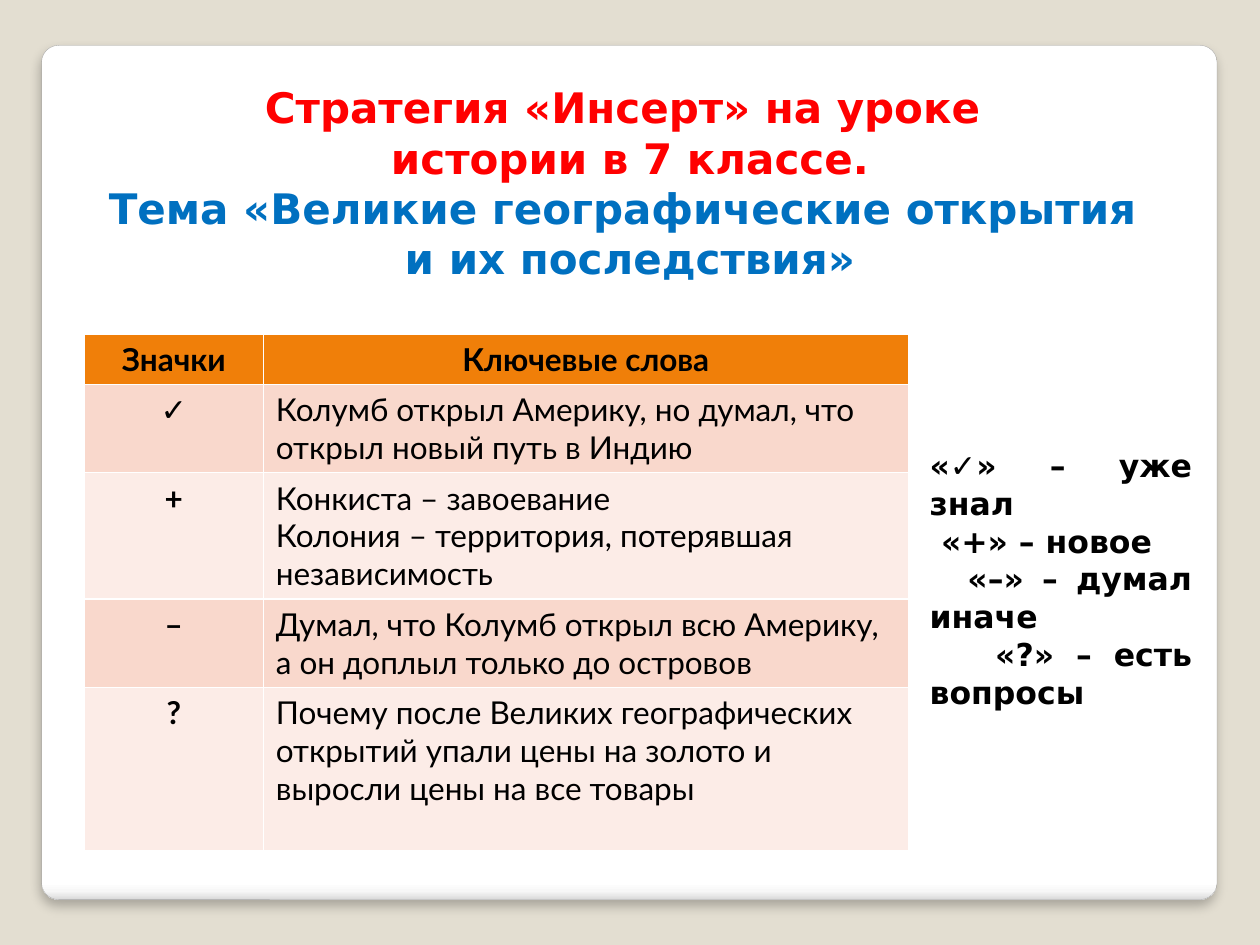
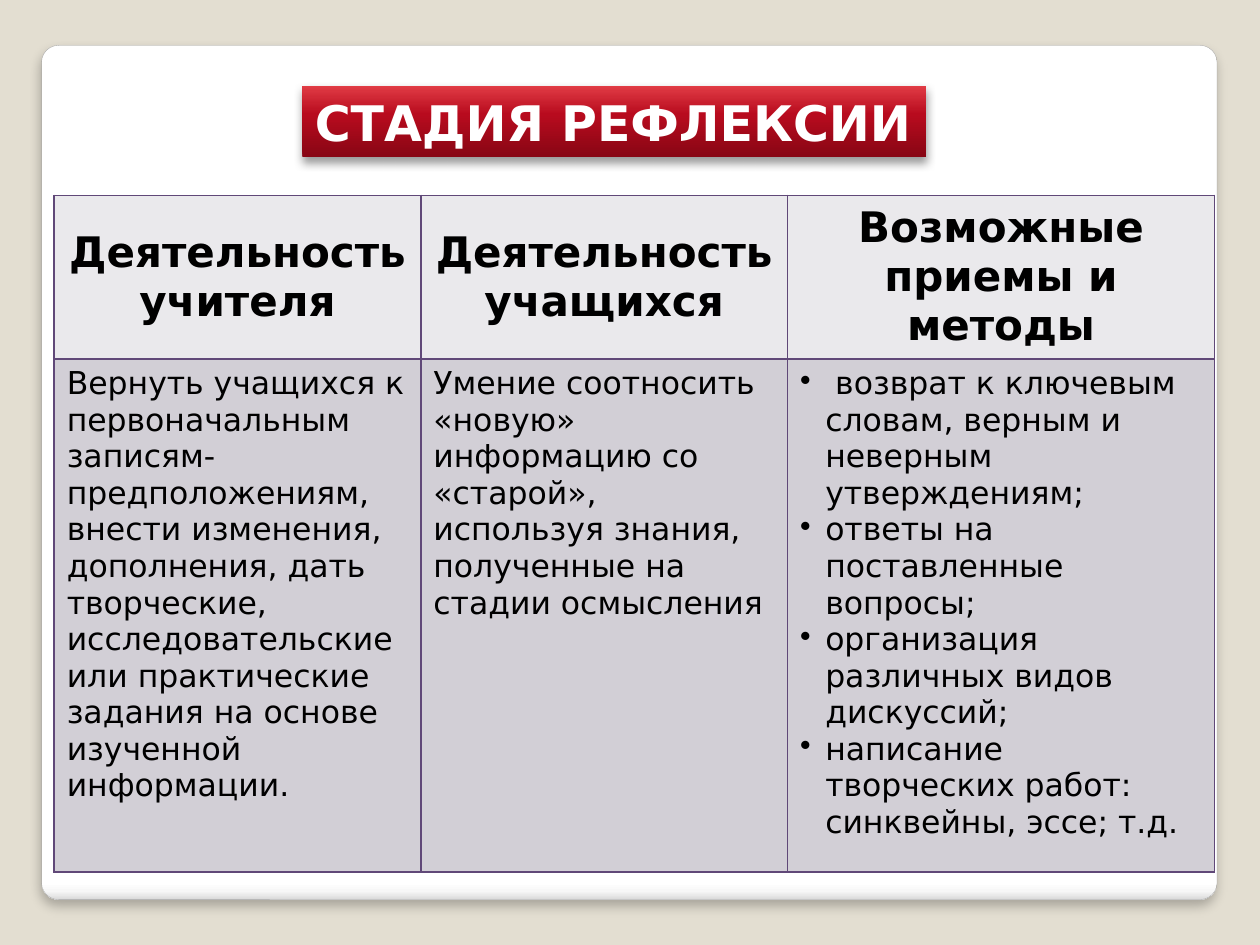
from lxml import etree
from pptx import Presentation
from pptx.dml.color import RGBColor
from pptx.enum.shapes import MSO_SHAPE
from pptx.enum.text import MSO_ANCHOR, PP_ALIGN
from pptx.oxml.ns import qn
from pptx.util import Inches, Pt

LEFT, CENTER, JUST = PP_ALIGN.LEFT, PP_ALIGN.CENTER, PP_ALIGN.JUSTIFY
TOP, MIDDLE = MSO_ANCHOR.TOP, MSO_ANCHOR.MIDDLE
RECT, ROUND = MSO_SHAPE.RECTANGLE, MSO_SHAPE.ROUNDED_RECTANGLE

# Shared look
WIDE, HIGH = Inches(10), Inches(7.5)
SAND, WHITE, BLACK = "E3DED1", "FFFFFF", "000000"
RED, BLUE, ORANGE, PURPLE = "FF0000", "0070C0", "F07F09", "604878"
PINKS = ["F9D8CC", "FCECE7"]
LILACS = ["EAE9EC", "D2CFD6"]
SANS, LATO = "DejaVu Sans", "Lato"
CARD = [(0, WHITE), (98, WHITE), (99, "F7F7F7"), (100, "DADADA")]
CRIMSON = [(0, "870614"), (60, "B80B1E"), (100, "E13C45")]


def color(code):
    return RGBColor.from_string(code)


def across(share):
    """Percent of the slide's width."""
    return int(WIDE * share / 100)


def down(share):
    """Percent of the slide's height."""
    return int(HIGH * share / 100)


def place(x, y, w, h):
    return across(x), down(y), across(w), down(h)


def node(parent, tag, **attrs):
    item = etree.SubElement(parent, qn(tag))
    for name, value in attrs.items():
        item.set(name, str(value))
    return item


def tint(parent, code):
    return node(parent, "a:srgbClr", val=code)


# Text
def style(runs, size, font, code, bold):
    for run in runs:
        run.font.size = Pt(size)
        run.font.name = font
        run.font.bold = bold
        run.font.color.rgb = color(code)


def write(frame, lines, size, font=SANS, code=BLACK, bold=False, align=LEFT):
    for i, line in enumerate(lines):
        para = frame.paragraphs[0] if i == 0 else frame.add_paragraph()
        para.text = line
        para.alignment = align
        style(para.runs, size, font, code, bold)
    return frame.paragraphs


def indent(para, margin, first):
    props = para._p.get_or_add_pPr()
    props.set("marL", str(Inches(margin)))
    props.set("indent", str(Inches(first)))
    return props


def bullet(para):
    node(indent(para, 0.2, -0.2), "a:buChar", char="•")


def textbox(slide, spot, anchor=TOP):
    frame = slide.shapes.add_textbox(*place(*spot)).text_frame
    frame.word_wrap = True
    frame.vertical_anchor = anchor
    return frame


# Shapes with a gradient and a soft shadow
def panel(slide, kind, spot, stops, angle, shade):
    shape = slide.shapes.add_shape(kind, *place(*spot))
    props = shape._element.spPr
    grad = etree.Element(qn("a:gradFill"), rotWithShape="1")
    band = node(grad, "a:gsLst")
    for pos, code in stops:
        tint(node(band, "a:gs", pos=pos * 1000), code)
    node(grad, "a:lin", ang=angle * 60000, scaled=0)
    props.insert(2, grad)
    shape.line.fill.background()
    shape.shadow.inherit = False
    alpha, blur, dist = shade
    drop = node(props.find(qn("a:effectLst")), "a:outerShdw", blurRad=Pt(blur),
                dist=Pt(dist), dir=90 * 60000, algn="t", rotWithShape=0)
    node(tint(drop, BLACK), "a:alpha", val=alpha * 1000)
    return shape


# Tables
def border(cell, code):
    props = cell._tc.get_or_add_tcPr()
    for i, side in enumerate(("a:lnL", "a:lnR", "a:lnT", "a:lnB")):
        line = etree.Element(qn(side), w=str(Pt(1)))
        tint(node(line, "a:solidFill"), code)
        props.insert(i, line)


def grid(slide, x, y, cols, rows):
    spot = place(x, y, sum(cols), sum(rows))
    table = slide.shapes.add_table(len(rows), len(cols), *spot).table
    for col, share in zip(table.columns, cols):
        col.width = across(share)
    for row, share in zip(table.rows, rows):
        row.height = down(share)
    return table


def fill(cell, lines, back, edge, anchor=TOP, **look):
    cell.fill.solid()
    cell.fill.fore_color.rgb = color(back)
    border(cell, edge)
    cell.vertical_anchor = anchor
    return write(cell.text_frame, lines, **look)


# Slides
def page(deck):
    slide = deck.slides.add_slide(deck.slide_layouts[6])
    slide.background.fill.solid()
    slide.background.fill.fore_color.rgb = color(SAND)
    card = panel(slide, ROUND, (3.3, 4.8, 93.3, 90.4), CARD, 90, (25, 6, 4))
    card.adjustments[0] = 0.02
    card.line.color.rgb = color("A4A4A4")
    card.line.width = Pt(0.16)
    return slide


def insert(deck):
    slide = page(deck)

    # Title in two colours
    head = ("Стратегия «Инсерт» на уроке \nистории в 7 классе.\n"
            "Тема «Великие географические открытия \nи их последствия»")
    frame = textbox(slide, (5.1, 8, 89.8, 22.93))
    para = write(frame, [head], 24, code=RED, bold=True, align=CENTER)[0]
    style(para.runs[2:], 24, SANS, BLUE, True)

    # Signs and key words; a row is as high as its count of lines
    words = [
        ("✓", 2, ["Колумб открыл Америку, но думал, что открыл новый путь в Индию"]),
        ("+", 3, ["Конкиста – завоевание",
                  "Колония – территория, потерявшая независимость"]),
        ("–", 2, ["Думал, что Колумб открыл всю Америку, "
                  "а он доплыл только до островов"]),
        ("?", 4, ["Почему после Великих географических открытий упали цены "
                  "на золото и выросли цены на все товары"]),
    ]
    rows = [1.35 + 4 * count for count in [1] + [word[1] for word in words]]
    table = grid(slide, 6.7, 35.33, [14.2, 51.2], rows)
    look = dict(edge=WHITE, size=18, font=LATO)
    strong = dict(look, bold=True, align=CENTER)
    for i, name in enumerate(("Значки", "Ключевые слова")):
        fill(table.cell(0, i), [name], ORANGE, **strong)
    for i, (sign, _, lines) in enumerate(words):
        back = PINKS[i % 2]
        fill(table.cell(i + 1, 0), [sign], back, **strong)
        fill(table.cell(i + 1, 1), lines, back, **look)

    # Key to the signs, stepping to the right
    key = ["«✓» – уже знал", "«+» – новое", "«–» – думал иначе", "«?» – есть вопросы"]
    frame = textbox(slide, (72.8, 46.4, 22.8, 29.6), MIDDLE)
    paras = write(frame, key, 18, bold=True, align=JUST)
    for para, step in zip(paras, (0, 0.09, 0.3, 0.52)):
        indent(para, 0, step)


def reflect(deck):
    slide = page(deck)

    # Banner
    banner = panel(slide, RECT, (24, 9.07, 49.5, 7.6), CRIMSON, 270, (40, 5.2, 3))
    banner.text_frame.word_wrap = False
    write(banner.text_frame, ["СТАДИЯ РЕФЛЕКСИИ"], 28, code=WHITE, bold=True)

    # Three columns of activity
    parts = [
        ("Деятельность учителя",
         ["Вернуть учащихся к первоначальным записям-\nпредположениям, внести "
          "изменения, дополнения, дать творческие, исследовательские или "
          "практические задания на основе изученной информации."]),
        ("Деятельность учащихся",
         ["Умение соотносить «новую» информацию со «старой», используя знания, "
          "полученные на стадии осмысления"]),
        ("Возможные приемы и методы",
         [" возврат к ключевым словам, верным и неверным утверждениям;",
          "ответы на поставленные вопросы;",
          "организация различных видов дискуссий;",
          "написание творческих работ: синквейны, эссе; т.д."]),
    ]
    table = grid(slide, 4.3, 20.67, [29.1, 29.1, 33.9], [17.33, 54.27])
    for i, (name, lines) in enumerate(parts):
        fill(table.cell(0, i), [name], LILACS[0], PURPLE, MIDDLE,
             size=24, bold=True, align=CENTER)
        paras = fill(table.cell(1, i), lines, LILACS[1], PURPLE, size=18)
        if len(lines) > 1:
            for para in paras:
                bullet(para)


def main():
    deck = Presentation()
    deck.slide_width, deck.slide_height = WIDE, HIGH
    insert(deck)
    reflect(deck)
    deck.save("out.pptx")


if __name__ == "__main__":
    main()
